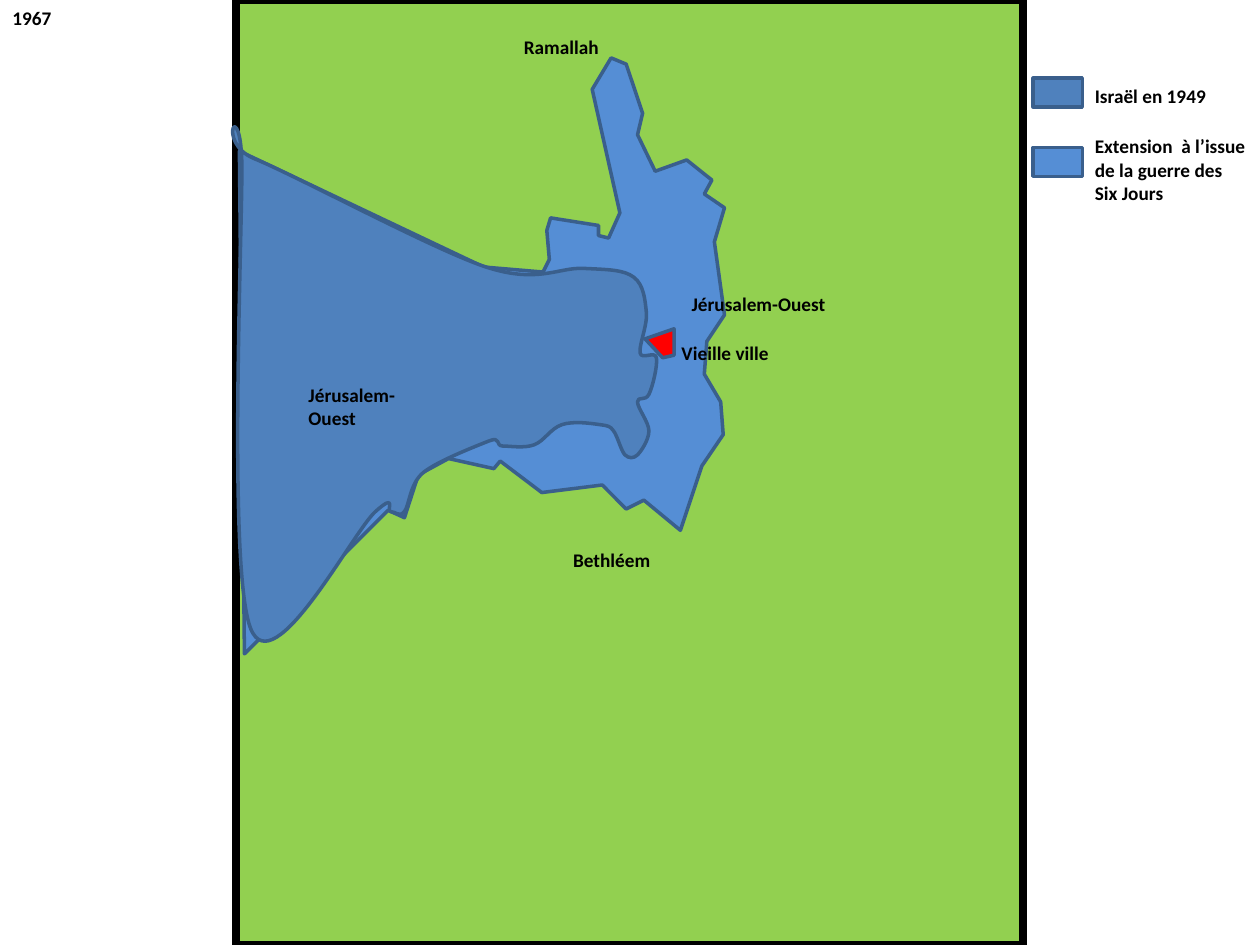
"""Map of Jerusalem in 1967, drawn on a grid of 1000 columns by 750 rows."""
from dataclasses import dataclass

import pptx
import pptx.dml.color
import pptx.enum.shapes
import pptx.enum.text
import pptx.oxml.ns
import pptx.util

COLS, ROWS = 1000, 750
CELL = pptx.util.Inches(10) // COLS
Point = tuple[float, float]


@dataclass(frozen=True)
class Theme:
    land: str = "92D050"
    israel: str = "4F81BD"
    extension: str = "558ED5"
    old_city: str = "FF0000"
    outline: str = "3A5F8C"
    ink: str = "000000"
    font: str = "Calibri"
    text_pt: float = 11
    line_pt: float = 2
    frame_pt: float = 4.5


@dataclass(frozen=True)
class Box:
    col: int
    row: int
    cols: int
    rows: int

    def emu(self) -> list[int]:
        return [n * CELL for n in (self.col, self.row, self.cols, self.rows)]


@dataclass(frozen=True)
class Label:
    text: str
    col: int
    row: int
    cols: int = 141
    lines: int = 1

    def box(self) -> Box:
        return Box(self.col, self.row, self.cols, 11 + 18 * self.lines)


@dataclass(frozen=True)
class Region:
    fill: str
    corners: list[Point]
    smooth: bool = False


@dataclass(frozen=True)
class Key:
    fill: str
    row: int
    label: Label


THEME = Theme()
FRAME = Box(187, 0, 625, ROWS)

REGIONS = [
    Region(THEME.extension, [
        (431, 216), (436, 206), (434, 183), (437, 173), (475, 179), (475, 187),
        (483, 189), (492, 169), (470, 71), (485, 46), (497, 51), (510, 90),
        (506, 107), (520, 136), (545, 127), (565, 143), (559, 154), (575, 165),
        (567, 192), (575, 250), (561, 271), (559, 297), (572, 319), (574, 345),
        (557, 370), (540, 421), (511, 397), (497, 404), (478, 385), (430, 391),
        (397, 366), (392, 372), (356, 364), (332, 377), (321, 411), (308, 405),
        (194, 519), (190, 120), (384, 212)]),
    Region(THEME.old_city, [(512, 269), (526, 284), (535, 282), (535, 261)]),
    Region(THEME.israel, [
        (192, 134), (202, 126), (383, 211), (463, 213), (503, 220), (513, 248),
        (508, 280), (521, 284), (515, 313), (506, 319), (515, 342), (506, 361),
        (496, 361), (487, 342), (476, 337), (446, 337), (424, 353), (399, 354),
        (388, 350), (336, 375), (321, 406), (310, 406), (298, 406), (199, 499)],
        smooth=True),
]

LABELS = [
    Label("Ramallah", 406, 23, 86),
    Label("Bethléem", 445, 430, 86),
    Label("Vieille ville", 531, 266, 102),
    Label("Jérusalem-Ouest", 539, 227),
    Label("Jérusalem-Ouest", 235, 299, 117, lines=2),
    Label("1967", 0, 0),
]

KEYS = [
    Key(THEME.israel, 62, Label("Israël en 1949", 859, 62)),
    Key(THEME.extension, 117,
        Label("Extension  à l’issue de la guerre des Six Jours", 859, 102, lines=3)),
]


def rgb(value: str) -> pptx.dml.color.RGBColor:
    return pptx.dml.color.RGBColor.from_string(value)


def paint(sp, fill: str, line: str = THEME.outline, width: float = THEME.line_pt) -> None:
    sp.shadow.inherit = False
    for part, color in ((sp.fill, fill), (sp.line.fill, line)):
        part.solid()
        part.fore_color.rgb = rgb(color)
    sp.line.width = pptx.util.Pt(width)


def draw_rect(shapes, box: Box, fill: str, **line) -> None:
    sp = shapes.add_shape(pptx.enum.shapes.MSO_SHAPE.RECTANGLE, *box.emu())
    paint(sp, fill, **line)


def spline(corners: list[Point]) -> list[Point]:
    points = []
    for i, end in enumerate(corners[1:] + corners[:1]):
        before, start, after = corners[i - 1], corners[i], corners[(i + 2) % len(corners)]
        points += [
            tuple(s + (e - b) / 6 for b, s, e in zip(before, start, end)),
            tuple(e - (a - s) / 6 for s, e, a in zip(start, end, after)),
            end,
        ]
    return points


def draw_region(shapes, region: Region) -> None:
    points = spline(region.corners) if region.smooth else region.corners[1:]
    builder = shapes.build_freeform(*region.corners[0], scale=CELL)
    builder.add_line_segments(points, close=True)
    sp = builder.convert_to_shape()
    if region.smooth:
        steps = sp._element.xpath(".//a:lnTo")
        for group in zip(*[iter(steps[:len(points)])] * 3):
            curve = group[0].makeelement(pptx.oxml.ns.qn("a:cubicBezTo"))
            group[0].addprevious(curve)
            for step in group:
                curve.append(step[0])
                step.getparent().remove(step)
    paint(sp, region.fill)


def draw_label(shapes, label: Label) -> None:
    tf = shapes.add_textbox(*label.box().emu()).text_frame
    tf.word_wrap = True
    tf.auto_size = pptx.enum.text.MSO_AUTO_SIZE.SHAPE_TO_FIT_TEXT
    r = tf.paragraphs[0].add_run()
    r.text = label.text
    style = {"name": THEME.font, "size": pptx.util.Pt(THEME.text_pt), "bold": True}
    for name, value in style.items():
        setattr(r.font, name, value)
    r.font.color.rgb = rgb(THEME.ink)


def main() -> None:
    prs = pptx.Presentation()
    prs.slide_width, prs.slide_height = COLS * CELL, ROWS * CELL
    shapes = prs.slides.add_slide(prs.slide_layouts[6]).shapes
    draw_rect(shapes, FRAME, THEME.land, line=THEME.ink, width=THEME.frame_pt)
    for region in REGIONS:
        draw_region(shapes, region)
    for label in LABELS:
        draw_label(shapes, label)
    for key in KEYS:
        draw_rect(shapes, Box(820, key.row, 39, 23), key.fill)
        draw_label(shapes, key.label)
    prs.save("out.pptx")


if __name__ == "__main__":
    main()
